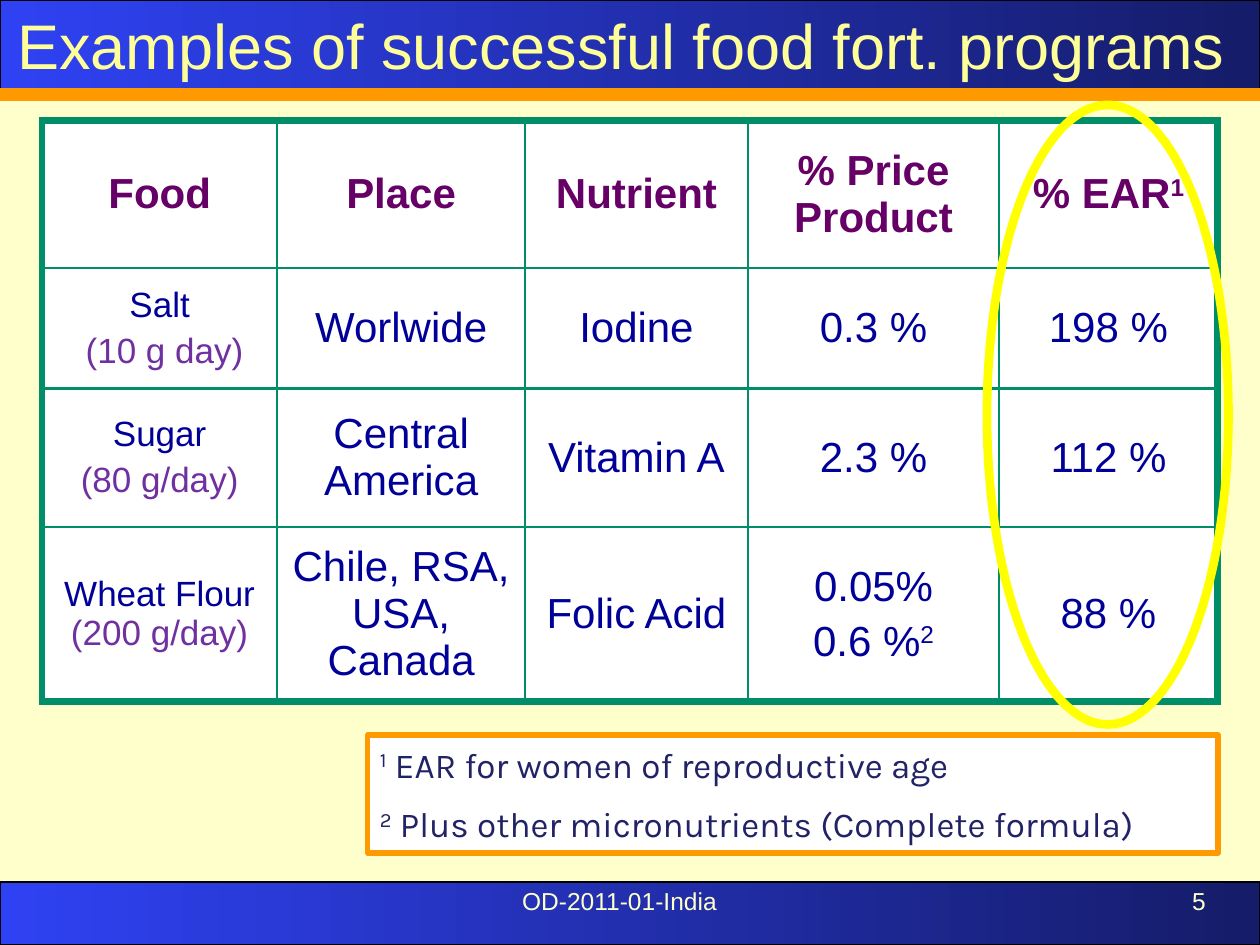
from lxml import etree
from pptx import Presentation
from pptx.dml.color import RGBColor
from pptx.enum import shapes, text
from pptx.oxml.ns import qn
from pptx.util import Pt

CREAM = RGBColor(0xFF, 0xFF, 0xCC)
PALE_YELLOW = RGBColor(0xFF, 0xFF, 0x99)
YELLOW = RGBColor(0xFF, 0xFF, 0x00)
ORANGE = RGBColor(0xFF, 0x99, 0x00)
BLUE = RGBColor(0x2F, 0x42, 0xF3)
NAVY = RGBColor(0x15, 0x1C, 0x69)
BLACK = RGBColor(0x00, 0x00, 0x00)
WHITE = RGBColor(0xFF, 0xFF, 0xFF)
GREEN = RGBColor(0x00, 0x8E, 0x69)
PLUM = RGBColor(0x66, 0x00, 0x66)
INK = RGBColor(0x00, 0x00, 0x99)
PURPLE = RGBColor(0x70, 0x30, 0xA0)
NOTE = RGBColor(0x22, 0x22, 0x67)

CENTER, LEFT, RIGHT = text.PP_ALIGN.CENTER, text.PP_ALIGN.LEFT, text.PP_ALIGN.RIGHT


def write(tf, paras, size, color, align=CENTER, font="Arial", bold=False, gap=0):
    """Each paragraph is a list of runs: a string, or (string, colour).
    A string that starts with ^ is superscript."""
    tf.word_wrap = True
    for i, runs in enumerate(paras):
        p = tf.add_paragraph() if i else tf.paragraphs[0]
        p.alignment = align
        if i:
            p.space_before = Pt(gap)
        for run in runs:
            words, tint = run if isinstance(run, tuple) else (run, color)
            r = p.add_run()
            r.text = words.lstrip("^")
            r.font.size, r.font.name, r.font.bold = Pt(size), font, bold
            r.font.color.rgb = tint
            if words.startswith("^"):
                r.font._element.set("baseline", "30000")


def border(cell, side, width):
    ln = etree.SubElement(cell._tc.get_or_add_tcPr(), qn("a:ln" + side), w=str(Pt(width)))
    fill = etree.SubElement(ln, qn("a:solidFill"))
    etree.SubElement(fill, qn("a:srgbClr"), val=str(GREEN))


prs = Presentation()
prs.slide_width, prs.slide_height = Pt(720), Pt(540)
s = prs.slides.add_slide(prs.slide_layouts[5])
s.background.fill.solid()
s.background.fill.fore_color.rgb = CREAM

# Gradient bars at top and bottom
for top, height in ((0, 54), (504, 36)):
    sp = s.shapes.add_shape(shapes.MSO_SHAPE.RECTANGLE, 0, Pt(top), Pt(720), Pt(height))
    sp.shadow.inherit = False
    sp.fill.gradient()
    sp.fill.gradient_angle = 0
    for stop, color, pos in zip(sp.fill.gradient_stops, (BLUE, NAVY), (0, 1)):
        stop.color.rgb = color
        stop.position = pos
    sp.line.color.rgb = BLACK
    sp.line.width = Pt(0.75)

# Orange rule under the title
rule = s.shapes.add_connector(shapes.MSO_CONNECTOR.STRAIGHT, 0, Pt(54), Pt(720), Pt(54))
rule.line.color.rgb = ORANGE
rule.line.width = Pt(8)
etree.SubElement(rule._element.spPr, qn("a:effectLst"))

# Footer and slide number
for left, width, words, align in ((222, 264, "OD-2011-01-India", CENTER),
                                  (528, 168, "5", RIGHT)):
    sp = s.shapes.add_textbox(Pt(left), Pt(502.5), Pt(width), Pt(37.5))
    write(sp.text_frame, [[words]], 14, CREAM, align)

# Food table
widths = (134.5, 141.5, 127.5, 143.5, 125)
heights = (84, 69, 79, 100)
rows = [
    [[["Food"]], [["Place"]], [["Nutrient"]], [["% Price Product"]], [["% EAR", "^1"]]],
    [[["Salt"], [" ", ("(10 g day)", PURPLE)]],
     [["Worlwide"]], [["Iodine"]], [["0.3 %"]], [["198 %"]]],
    [[["Sugar"], [("(80 g/day)", PURPLE)]],
     [["Central America"]], [["Vitamin A"]], [["2.3 %"]], [["112 %"]]],
    [[["Wheat Flour ", ("(200 g/day)", PURPLE)]],
     [["Chile, RSA, USA, Canada"]], [["Folic Acid"]],
     [["0.05%"], ["0.6 %", "^2"]], [["88 %"]]],
]
last_row, last_col = len(heights) - 1, len(widths) - 1
table = s.shapes.add_table(len(heights), len(widths), Pt(24), Pt(69),
                           Pt(sum(widths)), Pt(sum(heights))).table
table.first_row = table.horz_banding = False
for col, width in zip(table.columns, widths):
    col.width = Pt(width)
for row, height in zip(table.rows, heights):
    row.height = Pt(height)
for i, row in enumerate(rows):
    for j, paras in enumerate(row):
        cell = table.cell(i, j)
        cell.vertical_anchor = text.MSO_ANCHOR.MIDDLE
        outer = {"L": j == 0, "R": j == last_col, "T": i == 0, "B": i == last_row}
        for side, is_outer in outer.items():
            border(cell, side, 4.5 if is_outer else 1.5)
        cell.fill.solid()
        cell.fill.fore_color.rgb = WHITE
        size = 20 if i and j == 0 else 24
        write(cell.text_frame, paras, size, INK if i else PLUM,
              bold=i == 0, gap=size * 0.2)

# Footnotes
sp = s.shapes.add_shape(shapes.MSO_SHAPE.RECTANGLE, Pt(210), Pt(420), Pt(486), Pt(67.5))
sp.shadow.inherit = False
sp.fill.solid()
sp.fill.fore_color.rgb = WHITE
sp.line.color.rgb = ORANGE
sp.line.width = Pt(3)
tf = sp.text_frame
tf.vertical_anchor = text.MSO_ANCHOR.MIDDLE
write(tf, [["^1", " EAR for women of reproductive age"],
           ["^2", " Plus other micronutrients (Complete formula)"]],
      20, NOTE, LEFT, "Karla", gap=10)
for p in tf.paragraphs:
    pPr = p._p.get_or_add_pPr()
    pPr.set("marL", str(Pt(36)))
    pPr.set("indent", str(Pt(-36)))

# Title, above the bar
title = s.shapes.title
title.left, title.top, title.width, title.height = 0, 0, Pt(720), Pt(51)
write(title.text_frame, [["Examples of successful food fort. programs "]], 36, PALE_YELLOW)
title.text_frame.auto_size = text.MSO_AUTO_SIZE.NONE
title.text_frame.vertical_anchor = text.MSO_ANCHOR.MIDDLE
s.shapes._spTree.append(title._element)

# Ellipse around the EAR column
sp = s.shapes.add_shape(shapes.MSO_SHAPE.OVAL, Pt(564), Pt(60), Pt(138), Pt(354))
sp.shadow.inherit = False
sp.fill.background()
sp.line.color.rgb = YELLOW
sp.line.width = Pt(5)

prs.save("out.pptx")
